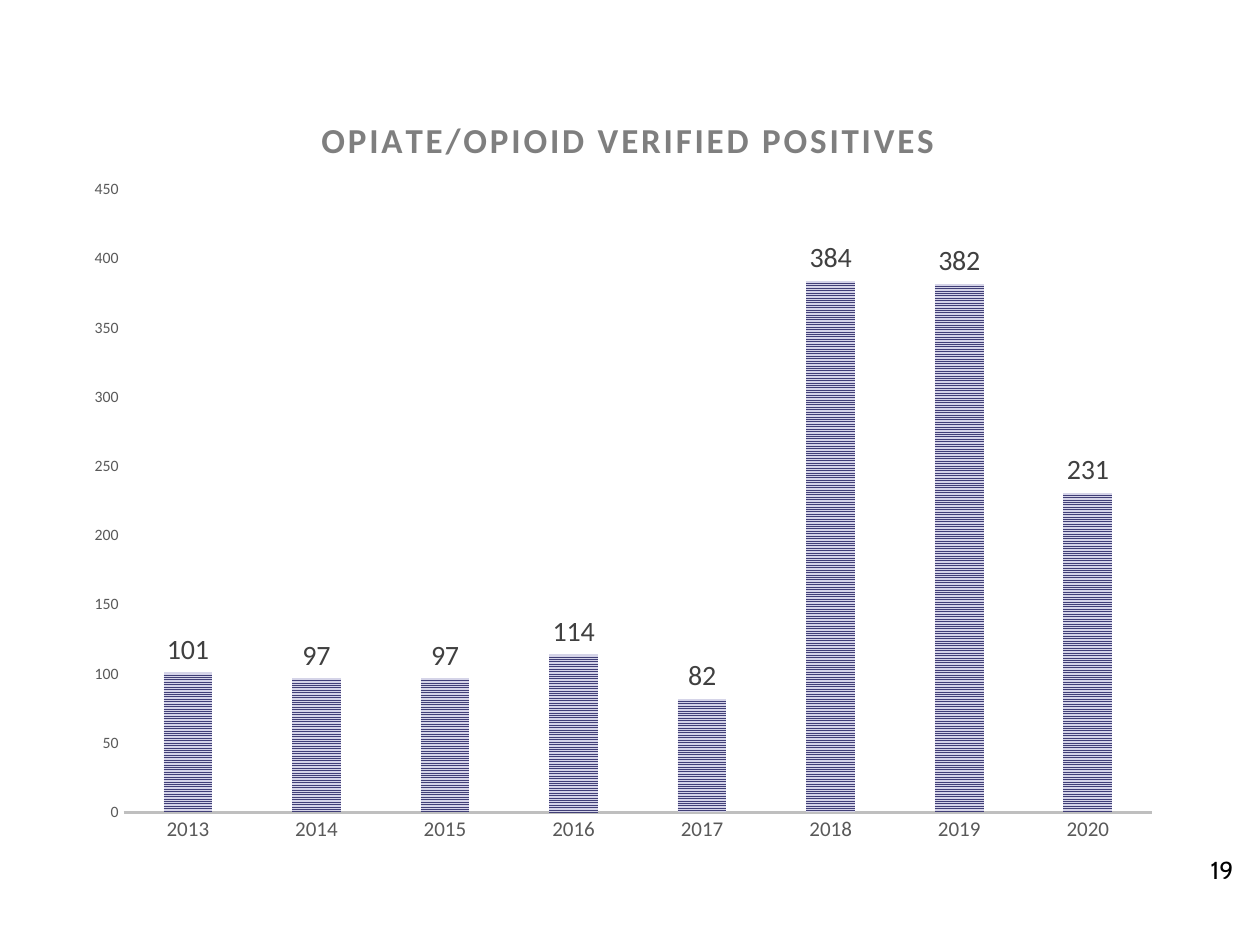
from lxml.etree import SubElement
from pptx import Presentation
from pptx.chart.data import CategoryChartData
from pptx.dml.color import RGBColor
from pptx.enum.chart import XL_CHART_TYPE, XL_LABEL_POSITION, XL_TICK_MARK
from pptx.enum.dml import MSO_PATTERN
from pptx.oxml.ns import qn
from pptx.util import Inches, Pt

COLORS = {
    "black": "000000", "title": "7F7F7F", "axis_text": "595959",
    "axis_line": "BFBFBF", "label": "404040", "stripe": "413F77", "bar": "D5D4E8",
}
POSITIVES = {
    "2013": 101, "2014": 97, "2015": 97, "2016": 114,
    "2017": 82, "2018": 384, "2019": 382, "2020": 231,
}


def style_font(font, size, color, name="Calibri", bold=False):
    font.name, font.size, font.bold = name, Pt(size), bold
    font.color.rgb = RGBColor.from_string(COLORS[color])


def place(part, index, **fractions):
    """Give a chart part a layout, at this child index, in fractions of the chart."""
    for old in part.findall(qn("c:layout")):
        part.remove(old)
    layout = SubElement(part, qn("c:layout"))
    part.insert(index, layout)
    manual = SubElement(layout, qn("c:manualLayout"))
    if "w" in fractions:
        SubElement(manual, qn("c:layoutTarget")).set("val", "inner")
    for mode in ("xMode", "yMode"):
        SubElement(manual, qn(f"c:{mode}")).set("val", "edge")
    for key, value in fractions.items():
        SubElement(manual, qn(f"c:{key}")).set("val", str(value))


deck = Presentation()
deck.slide_width, deck.slide_height = Inches(10), Inches(7.5)
page = deck.slides.add_slide(deck.slide_layouts[6])

# Page number
box = page.shapes.add_textbox(Inches(9.51), Inches(6.74), Inches(0.58), Inches(0.77))
box.text_frame.word_wrap = True
para = box.text_frame.paragraphs[0]
para.text = "19"
style_font(para.font, 14, "black", "Cabin")

# Column chart
data = CategoryChartData()
data.categories = list(POSITIVES)
data.add_series("Series 1", list(POSITIVES.values()))
chart = page.shapes.add_chart(
    XL_CHART_TYPE.COLUMN_CLUSTERED,
    Inches(0.58), Inches(0.62), Inches(8.73), Inches(6.18), data,
).chart
style_font(chart.font, 10, "black")
chart.has_legend = False

chart.has_title = True
para = chart.chart_title.text_frame.paragraphs[0]
para.text = "OPIATE/OPIOID VERIFIED POSITIVES"
for font in (para.font, para.runs[0].font):
    style_font(font, 20, "title", bold=True)
    font._element.set("spc", "150")

chart_xml = chart._chartSpace.chart
place(chart_xml.find(qn("c:title")), 1, x=0.22, y=0.04)
place(chart_xml.plotArea, 0, x=0.046, y=0.143, w=0.935, h=0.8)

# Axes
for axis, size in ((chart.category_axis, 12), (chart.value_axis, 9)):
    axis.has_major_gridlines = False
    axis.major_tick_mark = axis.minor_tick_mark = XL_TICK_MARK.NONE
    style_font(axis.tick_labels.font, size, "axis_text")
axis_line = chart.category_axis.format.line
axis_line.width = Pt(1.5)
axis_line.color.rgb = RGBColor.from_string(COLORS["axis_line"])
chart.value_axis.format.line.fill.background()
chart.value_axis.minimum_scale = 0
chart.value_axis.maximum_scale = 450
chart.value_axis.major_unit = 50

# Bars and their values
plot = chart.plots[0]
plot.gap_width, plot.overlap = 164, -22
plot.vary_by_categories = False
bars = plot.series[0]
fill = bars.format.fill
fill.patterned()
fill.pattern = MSO_PATTERN.NARROW_HORIZONTAL
fill.fore_color.rgb = RGBColor.from_string(COLORS["stripe"])
fill.back_color.rgb = RGBColor.from_string(COLORS["bar"])
bars.format.line.fill.background()
labels = bars.data_labels
labels.show_value = True
labels.position = XL_LABEL_POSITION.OUTSIDE_END
style_font(labels.font, 16, "label")

deck.save("out.pptx")
